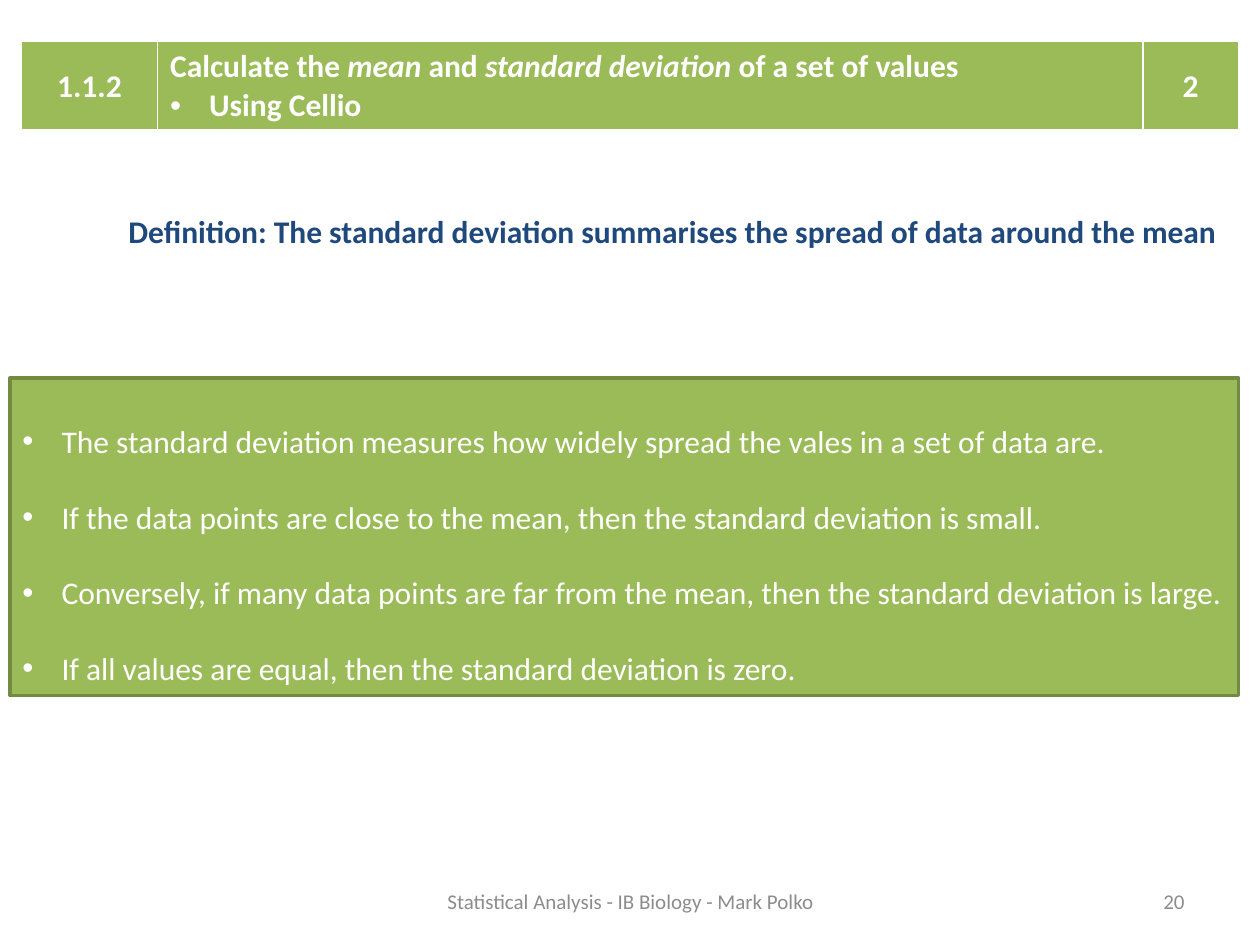
from pptx import Presentation
from pptx.dml.color import RGBColor
from pptx.enum.shapes import MSO_SHAPE as Shape
from pptx.enum.text import MSO_ANCHOR as Anchor, MSO_AUTO_SIZE as AutoSize, PP_ALIGN as Align
from pptx.oxml.ns import qn
from pptx.util import Inches, Pt
from lxml.etree import SubElement

WHITE, GREEN, DARK_GREEN, NAVY, GREY = "FFFFFF", "9BBB59", "738A42", "1F497D", "8C8C8C"


def rgb(hex_color):
    return RGBColor.from_string(hex_color)


class SlideBuilder:
    font = "Calibri"
    indent = Inches(0.31)

    def __init__(self, slide):
        self.slide = slide

    def fill_frame(self, frame, paragraphs, color, size=18, bold=False, align=Align.LEFT,
                   anchor=Anchor.TOP, spacing=None):
        """Fill a frame; each paragraph is (bulleted, [(text, italic), ...])."""
        frame.vertical_anchor = anchor
        for index, (bulleted, runs) in enumerate(paragraphs):
            paragraph = frame.add_paragraph() if index else frame.paragraphs[0]
            paragraph.alignment = align
            if spacing:
                paragraph.line_spacing = spacing
            if bulleted:
                self.bullet(paragraph)
            for text, italic in runs:
                run = paragraph.add_run()
                run.text = text
                run.font.name = self.font
                run.font.size = Pt(size)
                run.font.bold = bold
                run.font.italic = italic
                run.font.color.rgb = rgb(color)

    def bullet(self, paragraph):
        properties = paragraph._p.get_or_add_pPr()
        properties.set("marL", str(self.indent))
        properties.set("indent", str(-self.indent))
        SubElement(properties, qn("a:buFont"), typeface="Arial")
        SubElement(properties, qn("a:buChar"), char="•")

    def text(self, box, content, color, wrap=True, **style):
        frame = self.slide.shapes.add_textbox(*map(Inches, box)).text_frame
        frame.word_wrap = wrap
        self.fill_frame(frame, [(False, [(content, False)])], color, **style)

    def panel(self, box, points):
        panel = self.slide.shapes.add_shape(Shape.RECTANGLE, *map(Inches, box))
        panel.shadow.inherit = False
        panel.fill.solid()
        panel.fill.fore_color.rgb = rgb(GREEN)
        panel.line.color.rgb = rgb(DARK_GREEN)
        panel.line.width = Pt(2)
        frame = panel.text_frame
        frame.word_wrap = True
        frame.auto_size = AutoSize.SHAPE_TO_FIT_TEXT
        self.fill_frame(frame, [(True, [(point, False)]) for point in points], WHITE, spacing=2.0)

    def borders(self, cell):
        properties = cell._tc.get_or_add_tcPr()
        for side, width in (("L", 1), ("R", 1), ("T", 1), ("B", 3)):
            line = SubElement(properties, qn(f"a:ln{side}"), w=str(Pt(width)))
            SubElement(SubElement(line, qn("a:solidFill")), qn("a:srgbClr"), val=WHITE)

    def header_table(self, box, columns):
        """Build a one-row table from (width, alignment, paragraphs) columns."""
        table = self.slide.shapes.add_table(1, len(columns), *map(Inches, box)).table
        table.horz_banding = False
        for index, (width, align, paragraphs) in enumerate(columns):
            table.columns[index].width = Inches(width)
            cell = table.cell(0, index)
            self.borders(cell)
            cell.fill.solid()
            cell.fill.fore_color.rgb = rgb(GREEN)
            self.fill_frame(cell.text_frame, paragraphs, WHITE, bold=True, align=align)
            cell.vertical_anchor = Anchor.MIDDLE


def main():
    deck = Presentation()
    deck.slide_width, deck.slide_height = Inches(10), Inches(7.5)
    builder = SlideBuilder(deck.slides.add_slide(deck.slide_layouts[6]))

    objective = [
        (False, [("Calculate the ", False), ("mean", True), (" and ", False),
                 ("standard deviation", True), (" of a set of values", False)]),
        (True, [("Using Cellio", False)]),
    ]
    builder.header_table((0.17, 0.33, 9.66, 0.7), [
        (1.08, Align.CENTER, [(False, [("1.1.2", False)])]),
        (7.82, Align.LEFT, objective),
        (0.76, Align.CENTER, [(False, [("2", False)])]),
    ])
    builder.text((0.92, 1.63, 8.91, 0.4),
                 "Definition: The standard deviation summarises the spread of data around the mean",
                 NAVY, wrap=False, bold=True)
    builder.panel((0.08, 3, 9.75, 2.52), [
        "The standard deviation measures how widely spread the vales in a set of data are.",
        "If the data points are close to the mean, then the standard deviation is small.",
        "Conversely, if many data points are far from the mean, then the standard deviation is large.",
        "If all values are equal, then the standard deviation is zero.",
    ])
    footer = {"size": 12, "anchor": Anchor.MIDDLE}
    builder.text((3.42, 6.95, 3.17, 0.4), "Statistical Analysis - IB Biology - Mark Polko",
                 GREY, align=Align.CENTER, **footer)
    builder.text((7.17, 6.95, 2.33, 0.4), "20", GREY, align=Align.RIGHT, **footer)

    deck.save("out.pptx")


if __name__ == "__main__":
    main()
